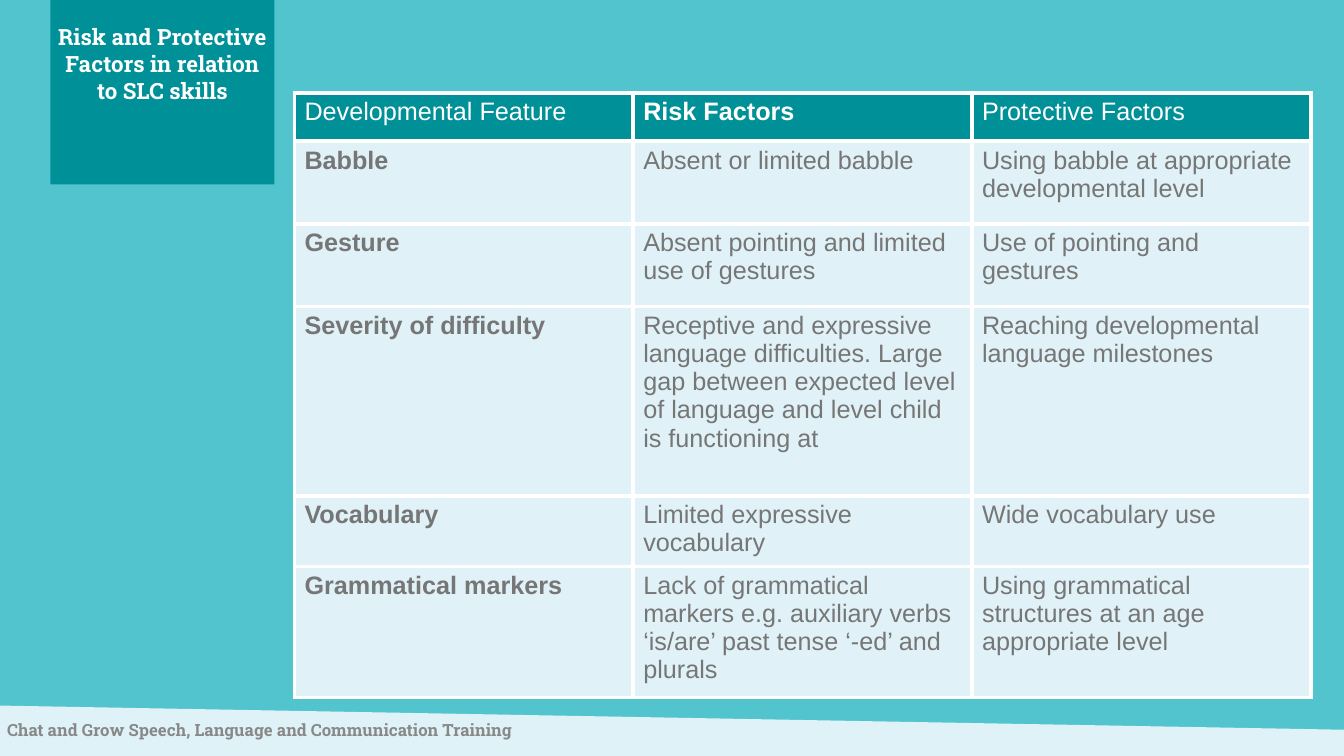
from lxml import etree
from pptx import Presentation, util as u
from pptx.dml.color import RGBColor
from pptx.enum import shapes, text
from pptx.oxml.ns import qn

INK = {"back": "51C4CE", "deep": "009098", "pale": "E0F2F8", "foot": "DFF2F7",
       "white": "FFFFFF", "body": "767676", "note": "888888"}
SLAB, SANS = "Roboto Slab", "Arial"


def paint(fill, ink):
    fill.solid()
    fill.fore_color.rgb = RGBColor.from_string(INK[ink])


def write(frame, words, size=18, face=SANS, ink="body", bold=False,
          align=text.PP_ALIGN.LEFT):
    frame.word_wrap = True
    frame.auto_size = text.MSO_AUTO_SIZE.NONE
    frame.vertical_anchor = text.MSO_ANCHOR.TOP
    frame.margin_left = frame.margin_right = 0
    frame.margin_top = frame.margin_bottom = 0
    para = frame.paragraphs[0]
    para.alignment = align
    para.line_spacing = 1.0
    run = para.add_run()
    run.text = words
    run.font.size = u.Pt(size)
    run.font.name = face
    run.font.bold = bold
    run.font.color.rgb = RGBColor.from_string(INK[ink])


deck = Presentation()
deck.slide_width, deck.slide_height = u.Inches(13.33), u.Inches(7.5)
wide, high = deck.slide_width, deck.slide_height
slide = deck.slides.add_slide(deck.slide_layouts[5])
paint(slide.background.fill, "back")
items = slide.shapes

pen = items.build_freeform(0, u.Inches(7))
pen.add_line_segments([(0, high), (wide, high), (wide, u.Inches(7.24))], close=True)
band = pen.convert_to_shape()
panel = items.add_shape(shapes.MSO_SHAPE.RECTANGLE, u.Inches(0.5), 0,
                        wide // 6, u.Inches(1.83))
for shape, ink in ((band, "foot"), (panel, "deep")):
    shape.shadow.inherit = False
    shape.line.fill.background()
    paint(shape.fill, ink)

title = items.title
title.left, title.top = u.Inches(0.57), u.Inches(0.23)
title.width, title.height = u.Inches(2.08), u.Inches(1.37)
write(title.text_frame, "Risk and Protective Factors in relation to SLC skills", size=16,
      face=SLAB, ink="white", bold=True, align=text.PP_ALIGN.CENTER)
panel._element.addnext(title._element)

rows = [
    (0.48, "Developmental Feature", "Risk Factors", "Protective Factors"),
    (0.82, "Babble", "Absent or limited babble",
     "Using babble at appropriate developmental level"),
    (0.82, "Gesture", "Absent pointing and limited use of gestures",
     "Use of pointing and gestures"),
    (1.88, "Severity of difficulty",
     "Receptive and expressive language difficulties. Large gap between expected level "
     "of language and level child is functioning at",
     "Reaching developmental language milestones"),
    (0.7, "Vocabulary", "Limited expressive vocabulary", "Wide vocabulary use"),
    (1.3, "Grammatical markers",
     "Lack of grammatical markers e.g. auxiliary verbs ‘is/are’ past tense ‘-ed’ and plurals",
     "Using grammatical structures at an age appropriate level"),
]
grid = items.add_table(len(rows), 3, u.Inches(2.92), u.Inches(0.92),
                       u.Inches(10.08), u.Inches(6)).table
for col in grid.columns:
    col.width = u.Inches(3.36)
for r, (tall, *words) in enumerate(rows):
    grid.rows[r].height = u.Inches(tall)
    head = r == 0
    for c, word in enumerate(words):
        cell = grid.cell(r, c)
        props = cell._tc.get_or_add_tcPr()
        for side in ("lnL", "lnR", "lnT", "lnB"):
            edge = etree.SubElement(props, qn("a:" + side), w=str(u.Pt(3)))
            solid = etree.SubElement(edge, qn("a:solidFill"))
            etree.SubElement(solid, qn("a:srgbClr"), val=INK["white"])
        paint(cell.fill, "deep" if head else "pale")
        cell.margin_left = cell.margin_right = u.Inches(0.1)
        cell.margin_top = cell.margin_bottom = u.Inches(0.05)
        write(cell.text_frame, word, ink="white" if head else "body",
              bold=c == (1 if head else 0))

foot = items.add_textbox(u.Inches(0.07), u.Inches(7.14), u.Inches(8.55), u.Inches(0.2))
write(foot.text_frame, "Chat and Grow Speech, Language and Communication Training",
      size=12, face=SLAB, ink="note", bold=True)

deck.save("out.pptx")
